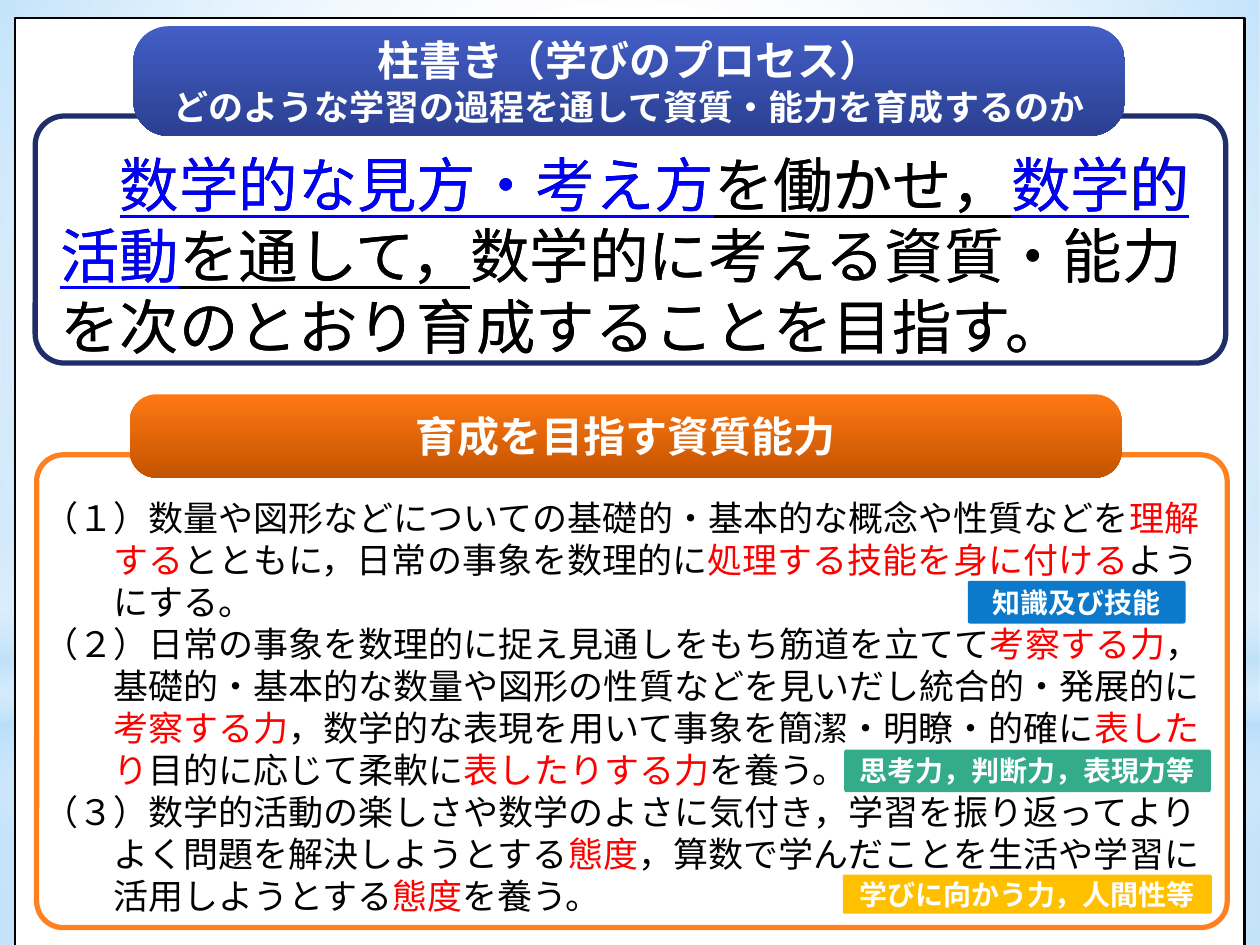
from lxml import etree
from pptx import Presentation
from pptx.dml.color import RGBColor
from pptx.enum.shapes import MSO_SHAPE
from pptx.enum.text import MSO_ANCHOR, PP_ALIGN
from pptx.oxml.ns import qn
from pptx.util import Cm, Pt

RECT, ROUND, OVAL = MSO_SHAPE.RECTANGLE, MSO_SHAPE.ROUNDED_RECTANGLE, MSO_SHAPE.OVAL
MIDDLE, TOP = MSO_ANCHOR.MIDDLE, MSO_ANCHOR.TOP
CENTER = PP_ALIGN.CENTER

THEME = {
    "head": "Lato", "body": "Noto Sans CJK JP",
    "white": "FFFFFF", "black": "000000", "sky": "B4DCFA",
    "red": "FF0000", "blue": "0000FF", "navy": "1F2E69", "orange": "FF8021",
    "big": 34, "title": 24, "text": 20, "tag": 16,
}
WHITE, SKY = THEME["white"], THEME["sky"]

GLOWS = [
    (RECT, (0, 14.17, 25.4, 4.88), [(0, WHITE, 91), (37, WHITE, 76), (100, SKY, 79)], True),
    (RECT, (0, 0, 25.4, 14.17), [(0, WHITE, 89), (48, WHITE, 62), (100, SKY, 79)], True),
    (RECT, (0, 10.46, 25.4, 6.35),
     [(0, WHITE, 0), (29, WHITE, 30), (45, SKY, 40), (55, WHITE, 26), (65, SKY, 60),
      (100, WHITE, 0)], False),
    (OVAL, (0, 4.45, 25.4, 14.17), [(0, WHITE, 100), (56, WHITE, 0)], True),
]
PANEL = (0.3, 0.36, 24.79, 18.72)
FRAMES = [
    ((0.71, 2.34, 24, 4.98), 0.118, "navy"),
    ((0.74, 9.17, 24, 9.53), 0.056, "orange"),
]
HEADS = [
    ((2.69, 0.53, 19.99, 2.21), ("435EC5", "2B4092"),
     [("柱書き（学びのプロセス）", "title"),
      ("どのような学習の過程を通して資質・能力を育成するのか", "text")]),
    ((2.62, 7.95, 19.99, 1.68), ("FF7813", "C45400"), [("育成を目指す資質能力", "title")]),
]
TAGS = [
    ((19.51, 11.71, 4.39, 0.86), "0D79CA", "知識及び技能"),
    ((17.02, 15.11, 7.39, 0.86), "34AC8B", "思考力，判断力，表現力等"),
    ((16.99, 17.63, 7.44, 0.79), "FFC000", "学びに向かう力，人間性等"),
]
GOALS_AT = (0.36, 9.88, 24.71, 9.47)
GOALS = [
    [("（１）数量や図形などについての基礎的・基本的な概念や性質などを", "black"), ("理解", "red")],
    [("　　する", "red"), ("とともに，日常の事象を数理的に", "black"),
     ("処理する技能を身に付ける", "red"), ("よう", "black")],
    [("　　にする。", "black")],
    [("（２）日常の事象を数理的に捉え見通しをもち筋道を立てて", "black"),
     ("考察する力", "red"), ("，", "black")],
    [("　　基礎的・基本的な数量や図形の性質などを見いだし統合的・発展的に", "black")],
    [("　　", "black"), ("考察する力", "red"),
     ("，数学的な表現を用いて事象を簡潔・明瞭・的確に", "black"), ("表した", "red")],
    [("　　り", "red"), ("目的に応じて柔軟に", "black"),
     ("表したりする力", "red"), ("を養う。", "black")],
    [("（３）数学的活動の楽しさや数学のよさに気付き，学習を振り返ってより", "black")],
    [("　　よく問題を解決しようとする", "black"), ("態度", "red"),
     ("，算数で学んだことを生活や学習に", "black")],
    [("　　活用しようとする", "black"), ("態度", "red"), ("を養う。", "black")],
]
LEAD_AT = (0.97, 2.74, 23.52, 4.62)
LEAD = [
    ("　", "black", False), ("数学的な見方・考え方", "blue", True),
    ("を働かせ，", "black", True), ("数学的活動", "blue", True), ("を通して，", "black", True),
    ("数学的に考える資質・能力を次のとおり育成することを目指す。", "black", False),
]
PLAIN = [("".join(part[0] for part in LEAD), "black", False)]


def place(box):
    return [Cm(v) for v in box]


def fade(shape, stops, round_fade=False):
    shape.fill.background()
    old = shape._element.spPr.find(qn("a:noFill"))
    grad = etree.Element(qn("a:gradFill"), rotWithShape="1")
    rows = etree.SubElement(grad, qn("a:gsLst"))
    for pos, color, alpha in stops:
        stop = etree.SubElement(rows, qn("a:gs"), pos=str(pos * 1000))
        tint = etree.SubElement(stop, qn("a:srgbClr"), val=color)
        if alpha < 100:
            etree.SubElement(tint, qn("a:alpha"), val=str(alpha * 1000))
    if round_fade:
        path = etree.SubElement(grad, qn("a:path"), path="circle")
        etree.SubElement(path, qn("a:fillToRect"),
                         {side: "50000" for side in ("l", "t", "r", "b")})
    else:
        etree.SubElement(grad, qn("a:lin"), ang="5400000", scaled="0")
    old.getparent().replace(old, grad)


def draw(slide, kind, box, fill=None, line=None, width=1, adj=None):
    shape = slide.shapes.add_shape(kind, *place(box))
    shape.shadow.inherit = False
    if fill:
        shape.fill.solid()
        shape.fill.fore_color.rgb = RGBColor.from_string(fill)
    else:
        shape.fill.background()
    if line:
        shape.line.color.rgb = RGBColor.from_string(THEME[line])
        shape.line.width = Pt(width)
    else:
        shape.line.fill.background()
    if adj is not None:
        shape.adjustments[0] = adj
    return shape


def style(run, size, color, face, bold=False, under=False):
    font = run.font
    font.size, font.name, font.bold = Pt(THEME[size]), THEME[face], bold
    font.color.rgb = RGBColor.from_string(THEME[color])
    if under:
        font.underline = True
    etree.SubElement(run._r.get_or_add_rPr(), qn("a:ea"), typeface=THEME[face])


def label(shape, lines):
    frame = shape.text_frame
    frame.word_wrap, frame.vertical_anchor = True, MIDDLE
    frame.text = "\n".join(text for text, size in lines)
    for para, (text, size) in zip(frame.paragraphs, lines):
        para.alignment = CENTER
        style(para.runs[0], size, "white", "head", bold=True)


def write(slide, box, rows, size, pitch, anchor, pads):
    frame = slide.shapes.add_textbox(*place(box)).text_frame
    frame.word_wrap, frame.vertical_anchor = True, anchor
    (frame.margin_left, frame.margin_top,
     frame.margin_right, frame.margin_bottom) = place(pads)
    for i, row in enumerate(rows):
        para = frame.add_paragraph() if i else frame.paragraphs[0]
        para.line_spacing = Pt(pitch)
        for text, color, *under in row:
            run = para.add_run()
            run.text = text
            style(run, size, color, "body", under=any(under))


def main():
    deck = Presentation()
    deck.slide_width, deck.slide_height = Cm(25.4), Cm(19.05)
    slide = deck.slides.add_slide(deck.slide_layouts[6])
    for kind, box, stops, round_fade in GLOWS:
        fade(draw(slide, kind, box), stops, round_fade)
    draw(slide, RECT, PANEL, WHITE, "black", 1.25)
    write(slide, GOALS_AT, GOALS, "text", 24, MIDDLE, (0.51, 0.13, 0.51, 0.87))
    for (box, adj, color), (spot, ends, lines) in zip(FRAMES, HEADS):
        draw(slide, ROUND, box, line=color, width=3, adj=adj)
        head = draw(slide, ROUND, spot, adj=0.319)
        fade(head, [(0, ends[0], 100), (100, ends[1], 100)])
        label(head, lines)
    for box, color, text in TAGS:
        label(draw(slide, ROUND, box, color, adj=0.05), [(text, "tag")])
    for row in (PLAIN, LEAD):
        write(slide, LEAD_AT, [row], "big", 40.6, TOP, (0.25, 0.25, 0.25, 0.13))
    deck.save("out.pptx")


if __name__ == "__main__":
    main()
